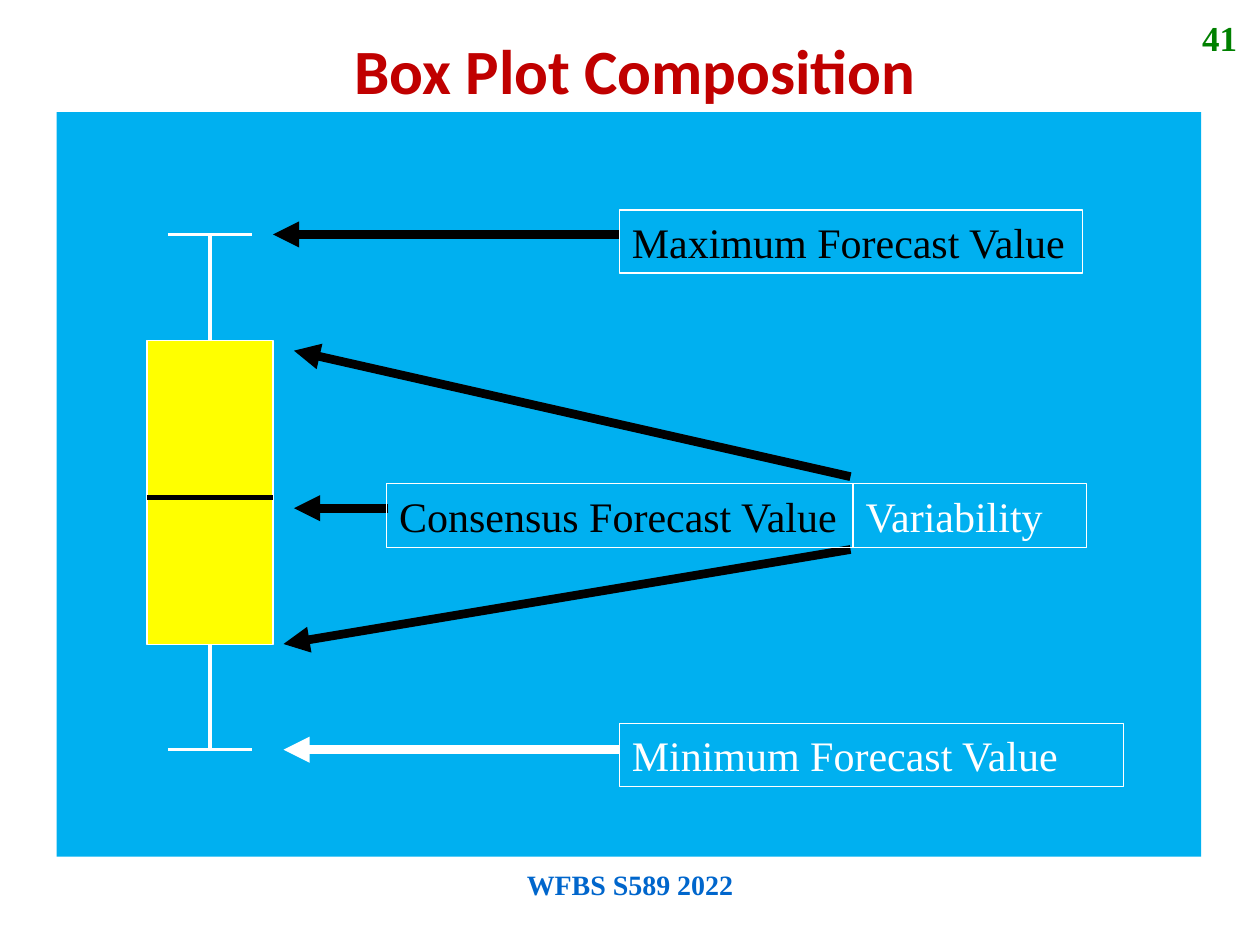
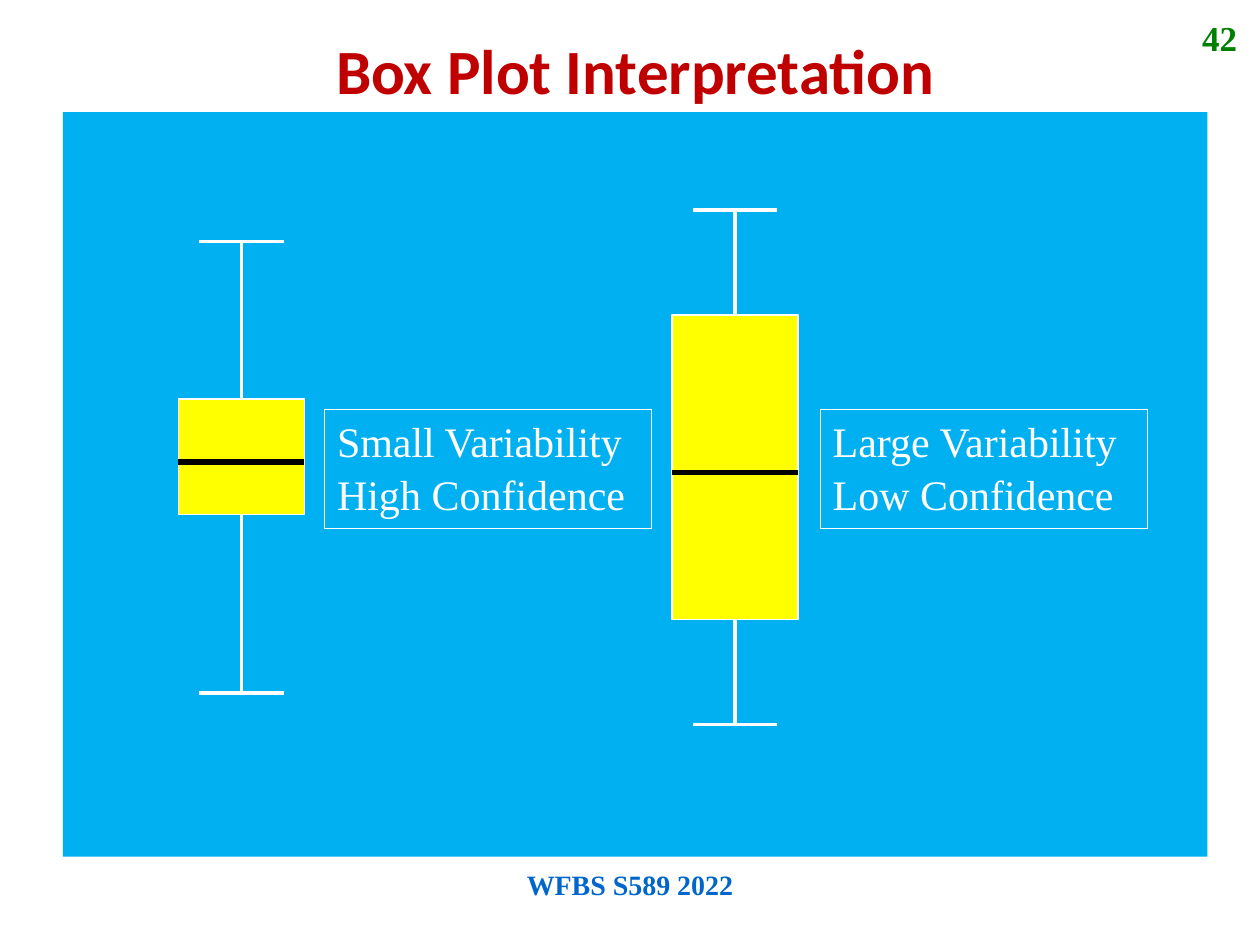
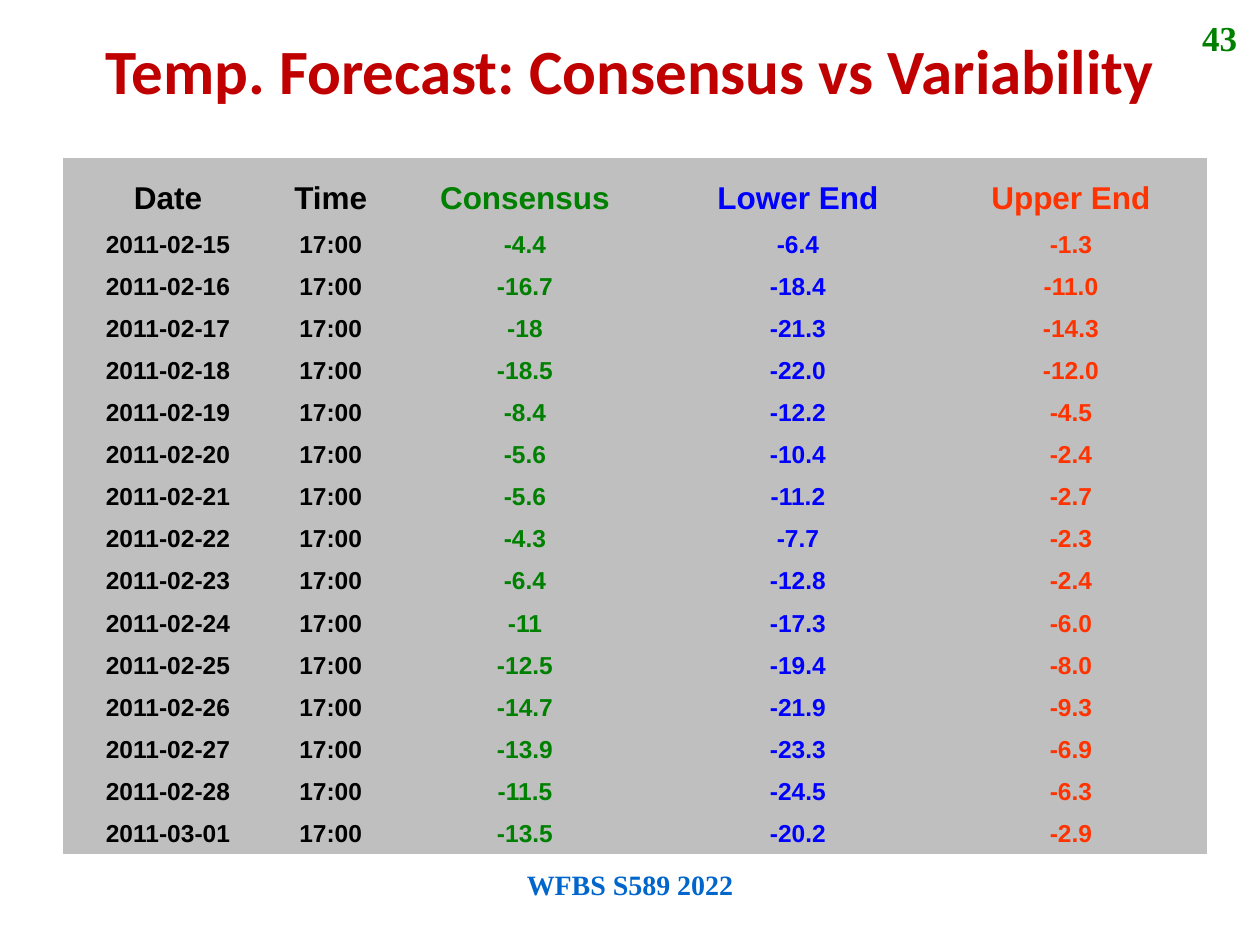
"""Builds three slides on box plots and temperature forecasts."""
from lxml.etree import SubElement
from pptx import Presentation
from pptx.dml.color import RGBColor
from pptx.enum.shapes import MSO_CONNECTOR, MSO_SHAPE
from pptx.enum.text import MSO_ANCHOR, PP_ALIGN
from pptx.oxml.ns import qn
from pptx.util import Pt

COLORS = {
    "black": "000000", "white": "FFFFFF", "sky": "00B0F0", "yellow": "FFFF00",
    "red": "C00000", "green": "008000", "blue": "0000FF", "orange": "FF3300",
    "navy": "0066CC", "gray": "BFBFBF",
}
SERIF = "Times New Roman"
PLAIN = "{2D5ABB26-0587-4C30-8999-92F81FD0307C}"
HEADS = ["Date", "Time", "Consensus", "Lower End", "Upper End"]
TONES = ["black", "black", "green", "blue", "orange"]
WIDTHS = [120, 66, 156, 156, 156]
TEMPS = [
    ("2011-02-15", "-4.4", "-6.4", "-1.3"),
    ("2011-02-16", "-16.7", "-18.4", "-11.0"),
    ("2011-02-17", "-18", "-21.3", "-14.3"),
    ("2011-02-18", "-18.5", "-22.0", "-12.0"),
    ("2011-02-19", "-8.4", "-12.2", "-4.5"),
    ("2011-02-20", "-5.6", "-10.4", "-2.4"),
    ("2011-02-21", "-5.6", "-11.2", "-2.7"),
    ("2011-02-22", "-4.3", "-7.7", "-2.3"),
    ("2011-02-23", "-6.4", "-12.8", "-2.4"),
    ("2011-02-24", "-11", "-17.3", "-6.0"),
    ("2011-02-25", "-12.5", "-19.4", "-8.0"),
    ("2011-02-26", "-14.7", "-21.9", "-9.3"),
    ("2011-02-27", "-13.9", "-23.3", "-6.9"),
    ("2011-02-28", "-11.5", "-24.5", "-6.3"),
    ("2011-03-01", "-13.5", "-20.2", "-2.9"),
]


def tint(name):
    return RGBColor.from_string(COLORS[name])


class Deck:
    def __init__(self):
        self.show = Presentation()
        self.show.slide_width, self.show.slide_height = Pt(720), Pt(540)

    def start(self, title, number, left=30, width=666):
        slide = self.show.slides.add_slide(self.show.slide_layouts[6])
        self.shapes = slide.shapes
        self.text(246, 492, 228, 36, "WFBS S589 2022", 16, "navy")
        self.text(678, 6, 36, 36, str(number), 20, "green", align=PP_ALIGN.RIGHT)
        self.text(left, 14.4, width, 51, title, 36, "red", "Calibri")

    def words(self, frame, text, size, color, font=SERIF, bold=True,
              align=PP_ALIGN.CENTER):
        for i, line in enumerate(text.split("\n")):
            para = frame.add_paragraph() if i else frame.paragraphs[0]
            para.alignment = align
            if i:
                para.space_before = Pt(1.5)
            run = para.add_run()
            run.text = line
            para.font.name, para.font.size, para.font.bold = font, Pt(size), bold
            para.font.color.rgb = tint(color)

    def text(self, x, y, w, h, text, size, color, font=SERIF, align=PP_ALIGN.CENTER):
        frame = self.shapes.add_textbox(Pt(x), Pt(y), Pt(w), Pt(h)).text_frame
        frame.word_wrap = True
        self.words(frame, text, size, color, font, align=align)

    def rect(self, x, y, w, h, fill=None, line=None):
        shape = self.shapes.add_shape(MSO_SHAPE.RECTANGLE, Pt(x), Pt(y), Pt(w), Pt(h))
        shape.shadow.inherit = False
        if fill:
            shape.fill.solid()
            shape.fill.fore_color.rgb = tint(fill)
        else:
            shape.fill.background()
        if line:
            shape.line.color.rgb = tint(line)
            shape.line.width = Pt(0.75)
        else:
            shape.line.fill.background()
        return shape

    def panel(self, x):
        self.rect(x, 64, 654, 425.5, "sky")

    def label(self, x, y, w, h, text, color="white"):
        frame = self.rect(x, y, w, h, line="white").text_frame
        frame.word_wrap = True
        frame.vertical_anchor = MSO_ANCHOR.TOP
        self.words(frame, text, 24, color, bold=False, align=PP_ALIGN.LEFT)

    def line(self, x1, y1, x2, y2, color="white", width=2):
        line = self.shapes.add_connector(
            MSO_CONNECTOR.STRAIGHT, Pt(x1), Pt(y1), Pt(x2), Pt(y2))
        line.line.color.rgb = tint(color)
        line.line.width = Pt(width)
        SubElement(line._element.spPr, qn("a:effectLst"))
        return line

    def arrow(self, x1, y1, x2, y2, color="black"):
        line = self.line(x1, y1, x2, y2, color, 5)
        SubElement(line._element.spPr.find(qn("a:ln")), qn("a:tailEnd"), type="triangle")

    def plot(self, mid, high, top, center, base, low):
        self.rect(mid - 36, top, 72, base - top, "yellow", "white")
        for end, edge in ((high, top), (low, base)):
            self.line(mid, edge, mid, end)
            self.line(mid - 24, end, mid + 24, end)
        self.line(mid - 36, center, mid + 36, center, "black", 3)

    def table(self, x, y, rows):
        grid = self.shapes.add_table(
            len(rows), len(WIDTHS), Pt(x), Pt(y), Pt(sum(WIDTHS)), Pt(397.4)).table
        grid.first_row = grid.horz_banding = False
        grid._tbl.tblPr.find(qn("a:tableStyleId")).text = PLAIN
        for col, width in zip(grid.columns, WIDTHS):
            col.width = Pt(width)
        for r, row in enumerate(rows):
            grid.rows[r].height = Pt(24 if r else 37.4)
            for c, value in enumerate(row):
                cell = grid.cell(r, c)
                cell.fill.solid()
                cell.fill.fore_color.rgb = tint("gray")
                cell.vertical_anchor = MSO_ANCHOR.BOTTOM
                self.words(cell.text_frame, value, 14 if r else 18, TONES[c], "Arial")


def main():
    deck = Deck()

    deck.start("Box Plot Composition", 41)
    deck.panel(32.4)
    deck.plot(120, 134, 194.4, 284.4, 368.4, 428.4)
    deck.arrow(354, 134, 156, 134)
    deck.arrow(222, 290.4, 168, 290.4)
    deck.arrow(486, 272.4, 168, 200.4)
    deck.arrow(486, 314, 162, 368)
    deck.arrow(354, 428.4, 162, 428.4, "white")
    deck.label(354, 120, 264.5, 36, "Maximum Forecast Value", "black")
    deck.label(354, 413.5, 288, 36, "Minimum Forecast Value")
    deck.label(221, 276.5, 266.5, 36.5, "Consensus Forecast Value", "black")
    deck.label(487.5, 276.5, 133.2, 36.5, "Variability")

    deck.start("Box Plot Interpretation", 42)
    deck.panel(36)
    deck.plot(420, 120, 180, 270, 354, 414)
    deck.plot(138, 138, 228, 264, 294, 396)
    deck.label(185.5, 234, 187, 68, "Small Variability\nHigh Confidence")
    deck.label(468.7, 234, 187, 68, "Large Variability\nLow Confidence")

    deck.start("Temp. Forecast: Consensus vs Variability", 43, 6, 708)
    deck.table(36, 90, [HEADS] + [(day, "17:00", *temps) for day, *temps in TEMPS])

    deck.show.save("out.pptx")


if __name__ == "__main__":
    main()
